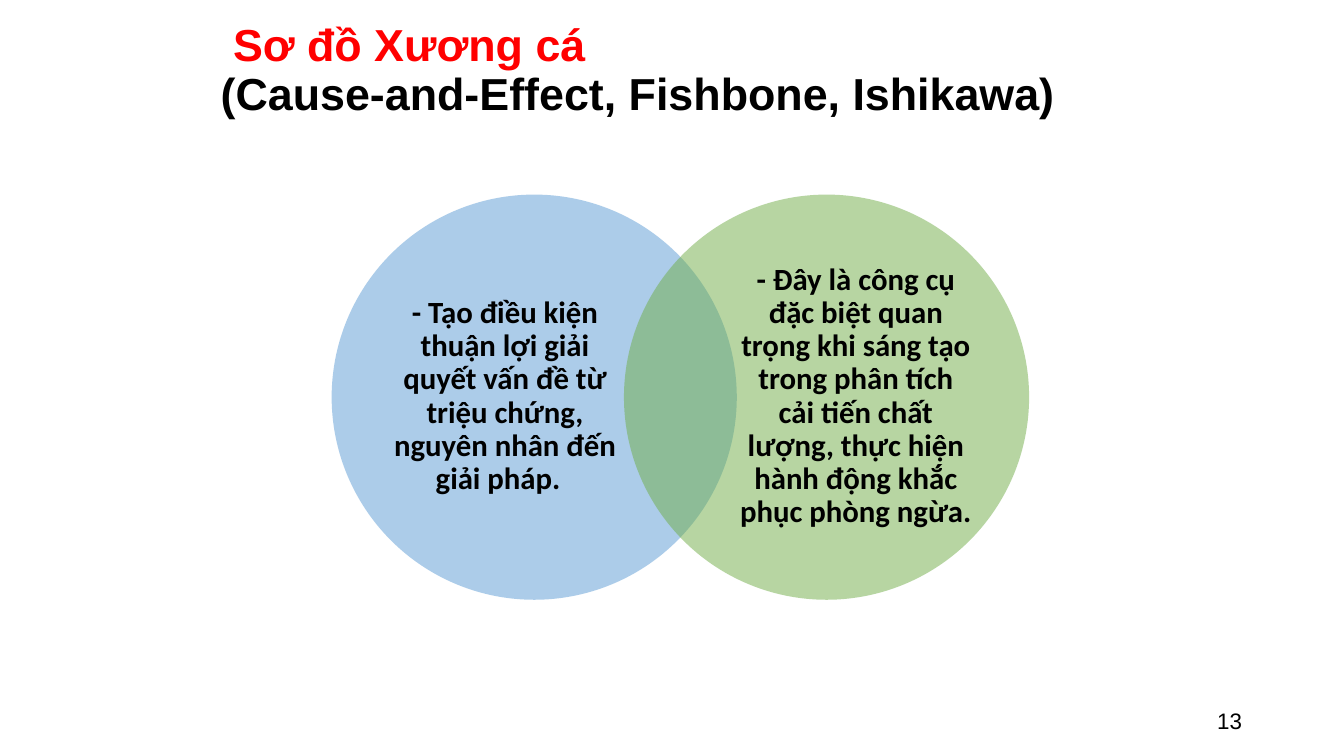
"""Build the fishbone diagram slide with two overlapping circles."""
from dataclasses import dataclass

import lxml.etree
import pptx
import pptx.dml.color
import pptx.enum.shapes
import pptx.enum.text
import pptx.oxml.ns
import pptx.slide
import pptx.util

Pt = pptx.util.Pt
RGBColor = pptx.dml.color.RGBColor
Align = pptx.enum.text.PP_ALIGN


@dataclass(frozen=True)
class Theme:
    heading_font: str = "Arial"
    body_font: str = "Calibri"
    title_size: float = 32
    body_size: float = 22
    number_size: float = 16
    black: str = "000000"
    red: str = "FF0000"
    blue: str = "5B9BD5"
    green: str = "70AD47"
    circle_alpha: int = 50
    line_spacing: float = 0.9


@dataclass(frozen=True)
class Box:
    left: float
    top: float
    width: float
    height: float

    def lengths(self) -> tuple[pptx.util.Length, ...]:
        return Pt(self.left), Pt(self.top), Pt(self.width), Pt(self.height)


@dataclass(frozen=True)
class Line:
    text: str
    color: str


@dataclass(frozen=True)
class TextStyle:
    font: str
    size: float
    bold: bool
    alignment: Align
    line_spacing: float
    inset: tuple[float, float] = (7.2, 3.6)


@dataclass(frozen=True)
class Circle:
    left: float
    text_left: float
    color: str
    text: str


THEME = Theme()
CIRCLE_TOP, CIRCLE_SIZE = 139, 289.4
TEXT_TOP, TEXT_WIDTH, TEXT_HEIGHT = 172.8, 167, 221

TITLE_STYLE = TextStyle(THEME.heading_font, THEME.title_size, True, Align.LEFT, THEME.line_spacing)
BODY_STYLE = TextStyle(THEME.body_font, THEME.body_size, True, Align.CENTER, THEME.line_spacing, (0, 0))
NUMBER_STYLE = TextStyle(THEME.heading_font, THEME.number_size, False, Align.RIGHT, 1.0)

TITLE = [
    Line(" Sơ đồ Xương cá", THEME.red),
    Line("(Cause-and-Effect, Fishbone, Ishikawa)", THEME.black),
]
CIRCLES = [
    Circle(236.9, 277.2, THEME.blue,
           "- Tạo điều kiện thuận lợi giải quyết vấn đề từ triệu chứng, "
           "nguyên nhân đến giải pháp.  "),
    Circle(445.7, 527.8, THEME.green,
           "- Đây là công cụ đặc biệt quan trọng khi sáng tạo trong phân tích "
           "cải tiến chất lượng, thực hiện hành động khắc phục phòng ngừa."),
]


def add_text(slide: pptx.slide.Slide, box: Box, lines: list[Line], style: TextStyle) -> None:
    frame = slide.shapes.add_textbox(*box.lengths()).text_frame
    frame.word_wrap = True
    frame.vertical_anchor = pptx.enum.text.MSO_ANCHOR.MIDDLE
    horizontal, vertical = style.inset
    frame.margin_left = frame.margin_right = Pt(horizontal)
    frame.margin_top = frame.margin_bottom = Pt(vertical)
    for index, line in enumerate(lines):
        paragraph = frame.add_paragraph() if index else frame.paragraphs[0]
        paragraph.text = line.text
        paragraph.alignment = style.alignment
        paragraph.line_spacing = style.line_spacing
        paragraph.font.name = style.font
        paragraph.font.size = Pt(style.size)
        paragraph.font.bold = style.bold
        paragraph.font.color.rgb = RGBColor.from_string(line.color)


def add_circle(slide: pptx.slide.Slide, circle: Circle) -> None:
    box = Box(circle.left, CIRCLE_TOP, CIRCLE_SIZE, CIRCLE_SIZE)
    shape = slide.shapes.add_shape(pptx.enum.shapes.MSO_SHAPE.OVAL, *box.lengths())
    shape.shadow.inherit = False
    shape.line.fill.background()
    shape.fill.solid()
    shape.fill.fore_color.rgb = RGBColor.from_string(circle.color)
    color = shape.element.spPr.find(".//" + pptx.oxml.ns.qn("a:srgbClr"))
    alpha = lxml.etree.SubElement(color, pptx.oxml.ns.qn("a:alpha"))
    alpha.set("val", str(THEME.circle_alpha * 1000))
    text_box = Box(circle.text_left, TEXT_TOP, TEXT_WIDTH, TEXT_HEIGHT)
    add_text(slide, text_box, [Line(circle.text, THEME.black)], BODY_STYLE)


def main() -> None:
    presentation = pptx.Presentation()
    presentation.slide_width, presentation.slide_height = Pt(960), Pt(540)
    slide = presentation.slides.add_slide(presentation.slide_layouts[6])
    add_text(slide, Box(150.5, 12.2, 653.8, 77.8), TITLE, TITLE_STYLE)
    for circle in CIRCLES:
        add_circle(slide, circle)
    add_text(slide, Box(678.2, 500.4, 216, 28.8), [Line("13", THEME.black)], NUMBER_STYLE)
    presentation.save("out.pptx")


if __name__ == "__main__":
    main()
